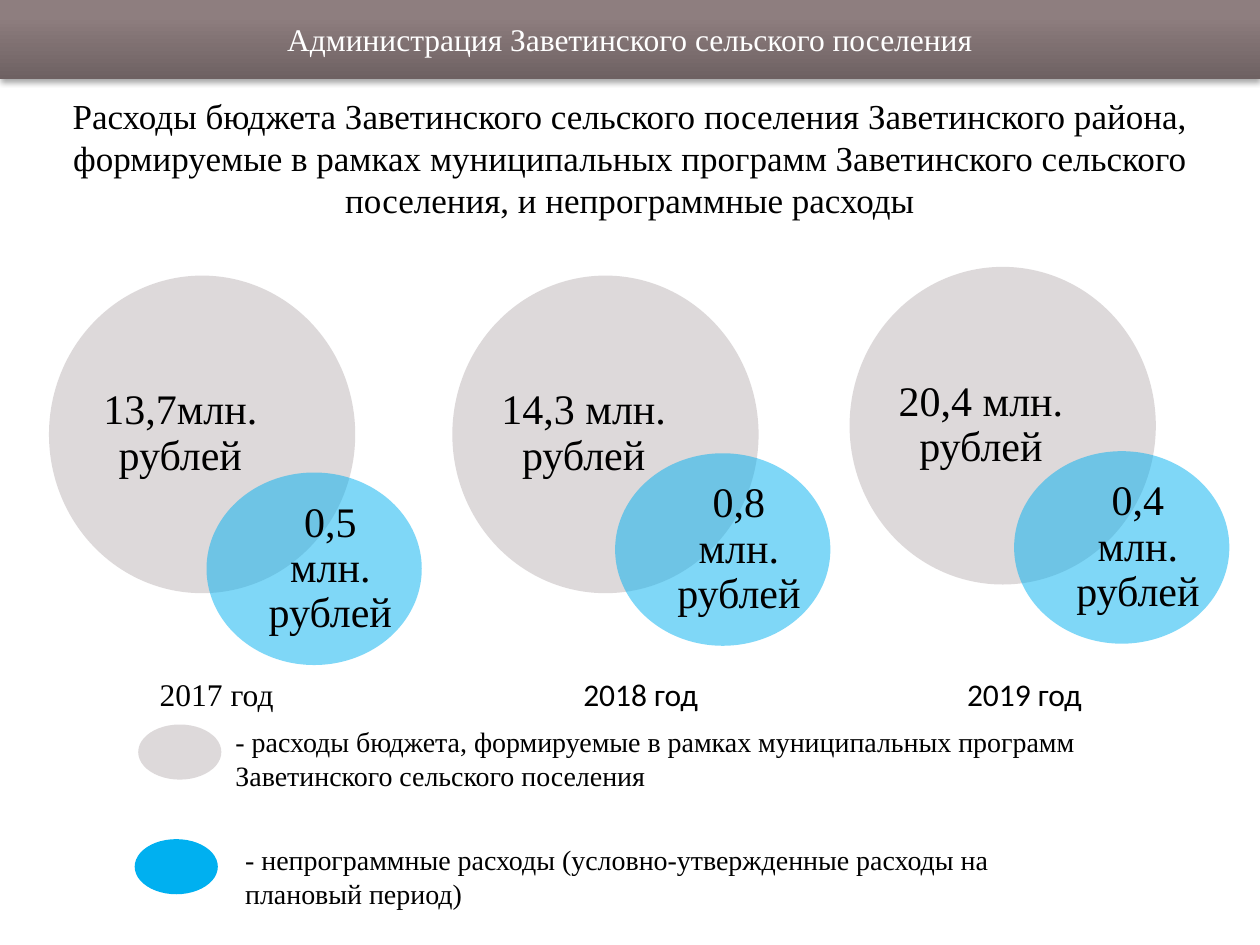
"""Build the slide comparing programme and non-programme budget spending by year."""
from dataclasses import dataclass

import pptx
import pptx.dml.color
import pptx.enum.shapes
import pptx.enum.text
import pptx.oxml
import pptx.oxml.ns
import pptx.util

Pt = pptx.util.Pt
SHAPE = pptx.enum.shapes.MSO_SHAPE
ALIGN = pptx.enum.text.PP_ALIGN
ANCHOR = pptx.enum.text.MSO_ANCHOR
SERIF = "Times New Roman"
GREY, BLUE, BLACK, WHITE = "BDB5B6", "00B0F0", "000000", "FFFFFF"
NS = pptx.oxml.ns.nsdecls("a")


@dataclass
class Circle:
    left: float
    top: float
    text: str


@dataclass
class CircleStyle:
    size: tuple[float, float]
    inset: tuple[float, float]
    text_size: tuple[float, float]
    color: str


@dataclass
class Year:
    label: str
    label_left: float
    font: str
    programme: Circle
    other: Circle


@dataclass
class LegendItem:
    left: float
    top: float
    color: str
    opacity: int
    text: str
    text_box: tuple[float, float, float, float]


BIG = CircleStyle((175, 181.5), (24.5, 21), (101, 139), GREY)
SMALL = CircleStyle((123, 110), (35, 13), (71.5, 84), BLUE)

YEARS = [
    Year("2017 год", 84.2, SERIF,
         Circle(28, 157.5, "13,7млн. рублей"), Circle(118, 270, "0,5 млн. рублей")),
    Year("2018 год", 326.2, "Calibri",
         Circle(258.5, 157.5, "14,3 млн. рублей"), Circle(351.5, 259, "0,8 млн. рублей")),
    Year("2019 год", 545.5, "Calibri",
         Circle(485.5, 152.5, "20,4 млн. рублей"), Circle(579.5, 257.8, "0,4 млн. рублей")),
]

LEGEND = [
    LegendItem(79, 414, GREY, 50,
               "- расходы бюджета, формируемые в рамках муниципальных программ "
               "Заветинского сельского поселения", (127.5, 410.5, 556, 46)),
    LegendItem(77, 479.5, BLUE, 100,
               "- непрограммные расходы (условно-утвержденные расходы на плановый период)",
               (133, 478, 487.5, 46)),
]


def rgb(color: str) -> pptx.dml.color.RGBColor:
    """Turn a hex string into a colour."""
    return pptx.dml.color.RGBColor.from_string(color)


def write(tf, text: str, size: float, font: str = SERIF, color: str = BLACK,
          align=ALIGN.LEFT, anchor=ANCHOR.TOP):
    """Fill a text frame with one formatted run and return its paragraph."""
    tf.word_wrap = True
    tf.auto_size = pptx.enum.text.MSO_AUTO_SIZE.NONE
    tf.vertical_anchor = anchor
    p = tf.paragraphs[0]
    p.alignment = align
    r = p.add_run()
    r.text = text
    r.font.size, r.font.name = Pt(size), font
    r.font.color.rgb = rgb(color)
    return p


def add_text(s, box: tuple[float, float, float, float], text: str, size: float,
             font: str = SERIF) -> None:
    """Add a left-aligned text box."""
    write(s.shapes.add_textbox(*map(Pt, box)).text_frame, text, size, font)


def add_ellipse(s, left: float, top: float, size: tuple[float, float],
                color: str, opacity: int) -> None:
    """Add an ellipse without outline, with the given opacity in percent."""
    sp = s.shapes.add_shape(SHAPE.OVAL, Pt(left), Pt(top), *map(Pt, size))
    sp.shadow.inherit = False
    sp.line.fill.background()
    sp.fill.solid()
    sp.fill.fore_color.rgb = rgb(color)
    if opacity < 100:
        clr = sp._element.spPr.find(".//" + pptx.oxml.ns.qn("a:srgbClr"))
        clr.append(pptx.oxml.parse_xml(f'<a:alpha {NS} val="{opacity * 1000}"/>'))


def add_circle(s, circle: Circle, style: CircleStyle) -> None:
    """Add a translucent circle with its amount."""
    add_ellipse(s, circle.left, circle.top, style.size, style.color, 50)
    dx, dy = style.inset
    sp = s.shapes.add_textbox(Pt(circle.left + dx), Pt(circle.top + dy),
                              *map(Pt, style.text_size))
    tf = sp.text_frame
    tf.margin_left = tf.margin_right = tf.margin_top = tf.margin_bottom = 0
    p = write(tf, circle.text, 24, align=ALIGN.CENTER, anchor=ANCHOR.MIDDLE)
    p.line_spacing = 0.9


def add_header(s) -> None:
    """Add the gradient band with the name of the administration."""
    sp = s.shapes.add_shape(SHAPE.RECTANGLE, 0, 0, Pt(720), Pt(45))
    sp.line.fill.background()
    sp.fill.gradient()
    sp.fill.gradient_angle = 90
    for stop, color, position in zip(sp.fill.gradient_stops, ("6E6162", "8E7E7F"), (0, 0.8)):
        stop.color.rgb = rgb(color)
        stop.position = position
    sp._element.spPr.append(pptx.oxml.parse_xml(
        f'<a:effectLst {NS}><a:outerShdw blurRad="{Pt(3.1)}" dist="{Pt(1.8)}" dir="5400000" '
        'rotWithShape="0"><a:srgbClr val="000000"><a:alpha val="35000"/></a:srgbClr>'
        '</a:outerShdw></a:effectLst>'))
    write(sp.text_frame, "Администрация Заветинского сельского поселения", 18,
          color=WHITE, align=ALIGN.CENTER, anchor=ANCHOR.MIDDLE)


def add_title(s) -> None:
    """Place and fill the title placeholder."""
    sp = s.shapes.title
    sp.left, sp.top, sp.width, sp.height = map(Pt, (0, 50.5, 720, 80))
    write(sp.text_frame,
          "Расходы бюджета Заветинского сельского поселения Заветинского района, "
          "формируемые в рамках муниципальных программ Заветинского сельского "
          "поселения, и непрограммные расходы", 20, align=ALIGN.CENTER)


def main() -> None:
    """Build and save the presentation."""
    prs = pptx.Presentation()
    prs.slide_width, prs.slide_height = Pt(720), Pt(540)
    s = prs.slides.add_slide(prs.slide_layouts[5])
    add_header(s)
    add_title(s)
    for year in YEARS:
        add_circle(s, year.programme, BIG)
        add_circle(s, year.other, SMALL)
        add_text(s, (year.label_left, 382.3, 112.5, 29), year.label, 18, year.font)
    for item in LEGEND:
        add_ellipse(s, item.left, item.top, (47.5, 31.5), item.color, item.opacity)
        add_text(s, item.text_box, item.text, 16)
    prs.save("out.pptx")


if __name__ == "__main__":
    main()
